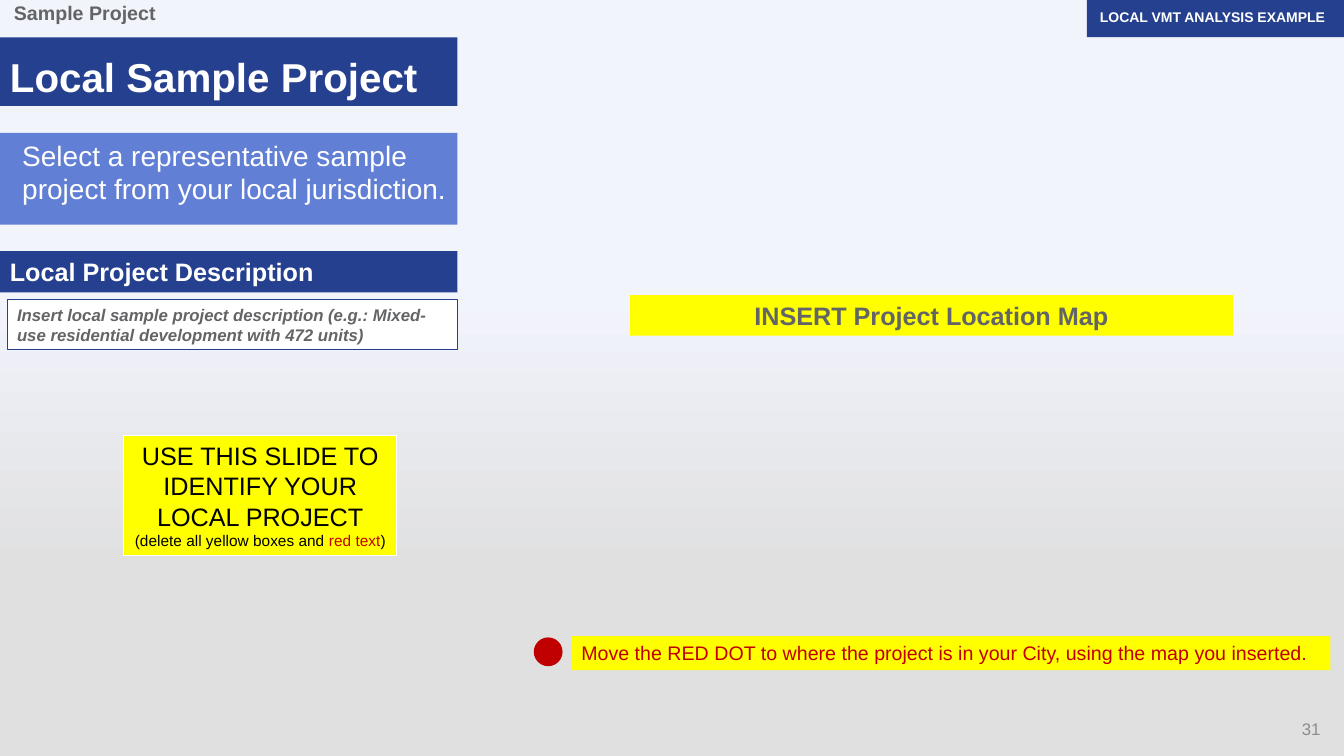
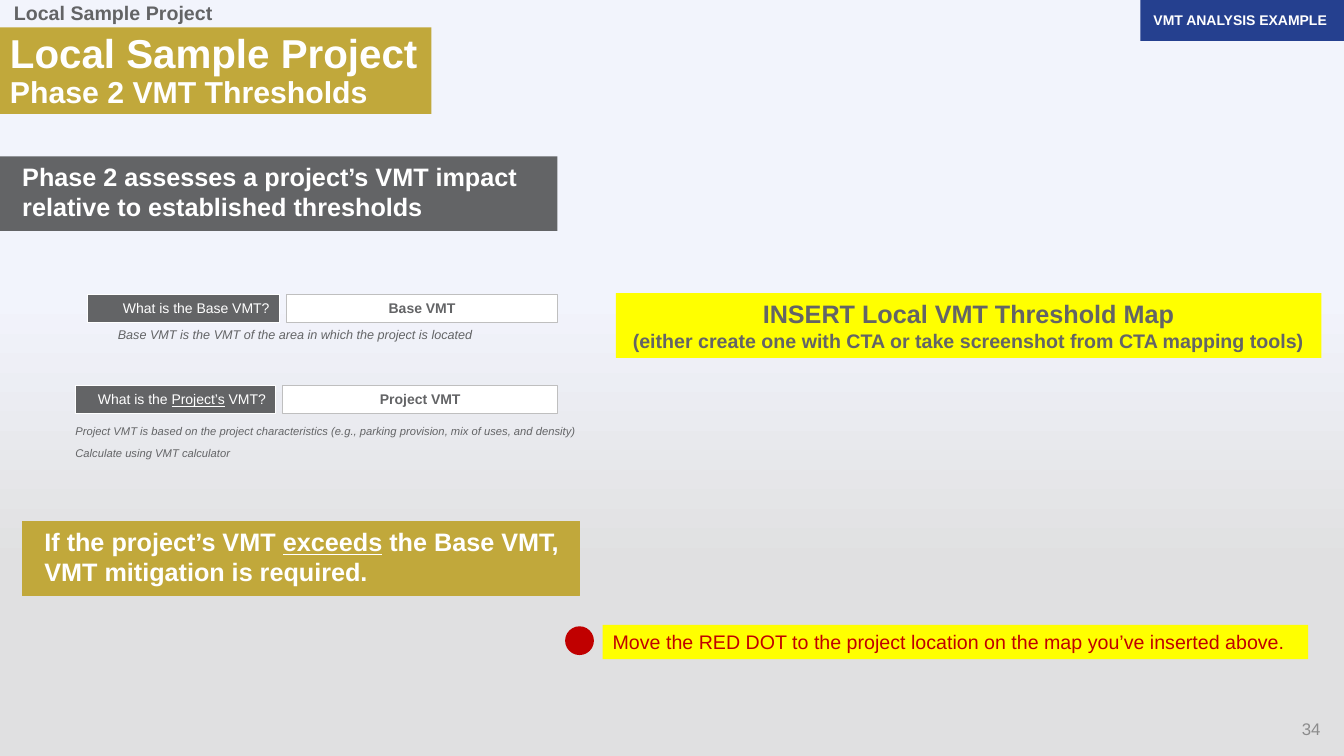
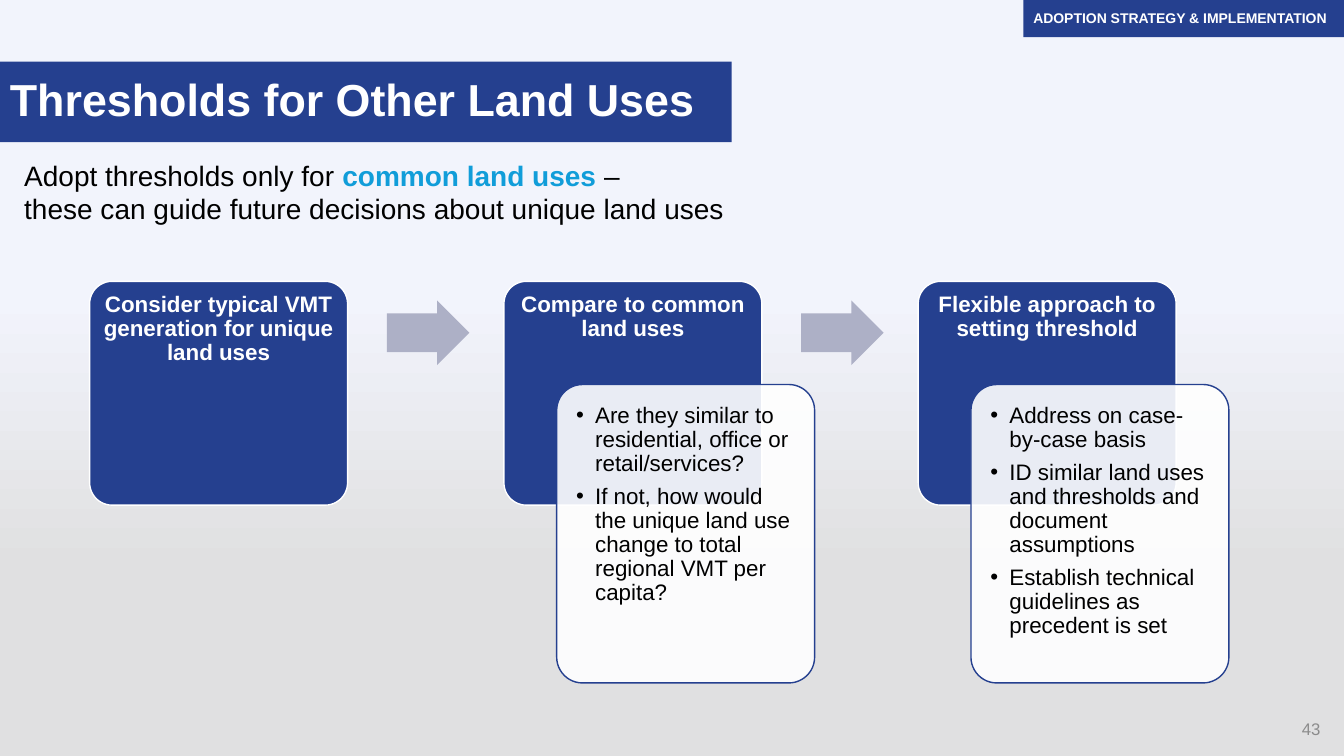
from lxml.etree import SubElement
from pptx import Presentation
from pptx.dml.color import RGBColor
from pptx.enum.shapes import MSO_SHAPE as Shape
from pptx.enum.text import MSO_ANCHOR as Anchor, MSO_AUTO_SIZE as AutoSize, PP_ALIGN as Align
from pptx.oxml.ns import qn
from pptx.util import Cm, Pt

NAVY = RGBColor(0x25, 0x40, 0x8F)
BLUE = RGBColor(0x62, 0x7F, 0xD6)
SKY = RGBColor(0x11, 0x9D, 0xD9)
GOLD = RGBColor(0xC1, 0xA8, 0x3B)
YELLOW = RGBColor(0xFF, 0xFF, 0x00)
RED = RGBColor(0xC0, 0x00, 0x00)
LAVENDER = RGBColor(0xAD, 0xB0, 0xC6)
DARK_GRAY = RGBColor(0x63, 0x64, 0x66)
PAGE_GRAY = RGBColor(0x8C, 0x8C, 0x8C)
LIGHT_GRAY = RGBColor(0xBF, 0xBF, 0xBF)
WHITE = RGBColor(0xFF, 0xFF, 0xFF)
BLACK = RGBColor(0x00, 0x00, 0x00)
BACKGROUND = ((0.39, RGBColor(0xF2, 0xF4, 0xFC)), (0.75, RGBColor(0xE0, 0xE0, 0xE1)))

FONT = "Arial"
SLIDE_WIDTH, SLIDE_HEIGHT = 33.87, 19.05
MARGINS = (0.25, 0.13, 0.25, 0.13)
BODY_MARGINS = (0.56, 0.13, 0.25, 0.13)


def set_bullet(paragraph, bullet):
    """Give the paragraph a hanging bullet, or clear the inherited one."""
    properties = paragraph._p.get_or_add_pPr()
    indent = Cm(0.48) if bullet else 0
    properties.set("marL", str(indent))
    properties.set("indent", str(-indent))
    if bullet:
        SubElement(properties, qn("a:buFont"), typeface=FONT)
        SubElement(properties, qn("a:buChar"), char=bullet)
    else:
        SubElement(properties, qn("a:buNone"))


def format_font(font, size, color, **styles):
    font.name = FONT
    font.size = Pt(size)
    font.color.rgb = color
    for name, value in styles.items():
        setattr(font, name, value)


def write(shape, paragraphs, font, layout=None, bullet=None, margins=MARGINS, anchor=Anchor.TOP):
    """Fill a shape; a paragraph is a string or a list of (text, font changes)."""
    frame = shape.text_frame
    frame.word_wrap = True
    frame.auto_size = AutoSize.NONE
    frame.vertical_anchor = anchor
    for side, margin in zip(("left", "top", "right", "bottom"), margins):
        setattr(frame, f"margin_{side}", Cm(margin))
    formats = {"alignment": Align.LEFT, "line_spacing": 1.0, "space_before": Pt(0),
               "space_after": Pt(0)} | (layout or {})
    for index, runs in enumerate(paragraphs):
        paragraph = frame.add_paragraph() if index else frame.paragraphs[0]
        set_bullet(paragraph, bullet)
        for name, value in formats.items():
            setattr(paragraph, name, value)
        if index == 0:
            paragraph.space_before = Pt(0)
        for text, changes in [(runs, {})] if isinstance(runs, str) else runs:
            if text == "\n":
                paragraph.add_line_break()
                continue
            run = paragraph.add_run()
            run.text = text
            format_font(run.font, **(font | changes))


def paint(shape, fill=None, line=None, line_width=0.75):
    if fill is None:
        shape.fill.background()
    else:
        shape.fill.solid()
        shape.fill.fore_color.rgb = fill
    if line is None:
        shape.line.fill.background()
    else:
        shape.line.color.rgb = line
        shape.line.width = Pt(line_width)


def add_shape(slide, kind, box, adjustments=(), **colors):
    shape = slide.shapes.add_shape(kind, *map(Cm, box))
    shape.shadow.inherit = False
    for index, value in enumerate(adjustments):
        shape.adjustments[index] = value
    paint(shape, **colors)
    return shape


def add_panel(slide, box, paragraphs, font, fill, line=None, **text_options):
    panel = add_shape(slide, Shape.RECTANGLE, box, fill=fill, line=line)
    write(panel, paragraphs, font, **text_options)


def add_text(slide, box, paragraphs, font, **text_options):
    write(slide.shapes.add_textbox(*map(Cm, box)), paragraphs, font, **text_options)


def fill_placeholder(placeholder, box, paragraphs, font, fill=None, **text_options):
    for name, value in zip(("left", "top", "width", "height"), box):
        setattr(placeholder, name, Cm(value))
    paint(placeholder, fill)
    write(placeholder, paragraphs, font, **text_options)


def fill_body(slide, box, paragraphs, font, **options):
    fill_placeholder(slide.placeholders[1], box, paragraphs, font,
                     layout={"space_after": Pt(6)}, **options)


def add_slide(presentation, page, section=None):
    slide = presentation.slides.add_slide(presentation.slide_layouts[1])
    add_text(slide, (30.99, 17.86, 2.54, 1.02), [page], {"size": 12, "color": PAGE_GRAY},
             layout={"alignment": Align.RIGHT}, anchor=Anchor.MIDDLE)
    if section:
        add_text(slide, (0.1, -0.1, 12.4, 0.86), [section],
                 {"size": 14, "color": DARK_GRAY, "bold": True})
    return slide


def add_corner_tag(slide, top, width, height, text, inset=0.33, spacing=1.1):
    add_panel(slide, (SLIDE_WIDTH - width, top, width, height), [text],
              {"size": 10, "color": WHITE, "bold": True}, NAVY,
              layout={"line_spacing": spacing}, margins=(inset, inset, 0.2, 0.2))


def add_red_dot_note(slide, left, top, width, text):
    add_shape(slide, Shape.OVAL, (left - 0.93, top + 0.05, 0.69, 0.69),
              fill=RED, line=RED, line_width=1)
    add_panel(slide, (left, top, width, 0.86), [text], {"size": 14, "color": RED}, YELLOW)


def add_map_prompt(slide, box, paragraphs):
    add_panel(slide, box, paragraphs, {"size": 18, "color": DARK_GRAY, "bold": True}, YELLOW,
              layout={"alignment": Align.CENTER})


def add_question_row(slide, box, question_width, question, answer):
    left, top, width, height = box
    answer_offset = question_width + 0.18
    add_panel(slide, (left, top, question_width, height), [question],
              {"size": 10, "color": WHITE}, DARK_GRAY, WHITE, layout={"alignment": Align.RIGHT})
    add_panel(slide, (left + answer_offset, top, width - answer_offset, height), [answer],
              {"size": 10, "color": DARK_GRAY, "bold": True}, WHITE, LIGHT_GRAY,
              layout={"alignment": Align.CENTER})


def add_step(slide, left, top, heading, details):
    """Draw a step card with its overlapping card of details, if any."""
    card = add_shape(slide, Shape.ROUNDED_RECTANGLE, (left, top, 6.5, 5.64), [0.1],
                     fill=NAVY, line=WHITE, line_width=1)
    write(card, [heading], {"size": 16, "color": WHITE, "bold": True},
          layout={"alignment": Align.CENTER, "line_spacing": 0.9}, margins=(0.13,) * 4)
    if details:
        detail_card = add_shape(slide, Shape.ROUNDED_RECTANGLE,
                                (left + 1.33, top + 2.6, 6.5, 7.52), [0.1],
                                fill=WHITE, line=NAVY, line_width=1)
        fill_color = detail_card.fill._xPr.find(qn("a:solidFill"))[0]
        SubElement(fill_color, qn("a:alpha"), val="90000")
        write(detail_card, details, {"size": 16, "color": BLACK}, bullet="•",
              layout={"line_spacing": 0.9, "space_after": Pt(6)}, margins=(0.3,) * 4)


def add_step_flow(slide, left, top, steps, pitch=10.44):
    for index, (heading, details) in enumerate(steps):
        step_left = left + index * pitch
        add_step(slide, step_left, top, heading, details)
        if index < len(steps) - 1:
            add_shape(slide, Shape.RIGHT_ARROW, (step_left + 7.49, top + 0.48, 2.08, 1.63),
                      [0.6, 0.5], fill=LAVENDER)


def build_project_slide(presentation):
    slide = add_slide(presentation, "31", "Sample Project")
    add_corner_tag(slide, -0.15, 6.48, 1.09, "LOCAL VMT ANALYSIS EXAMPLE")
    white_bold = {"color": WHITE, "bold": True}
    heading = {"layout": {"line_spacing": 0.9}, "anchor": Anchor.BOTTOM}
    fill_placeholder(slide.shapes.title, (0, 0.94, 11.53, 1.73), ["Local Sample Project"],
                     white_bold | {"size": 28.8}, NAVY, **heading)
    fill_body(slide, (0, 3.35, 11.53, 2.31),
              ["Select a representative sample project from your local jurisdiction."],
              {"size": 20, "color": WHITE}, fill=BLUE, margins=BODY_MARGINS)
    add_panel(slide, (0, 6.33, 11.53, 1.04), ["Local Project Description"],
              white_bold | {"size": 18}, NAVY, **heading)
    add_panel(slide, (0.18, 7.54, 11.35, 1.28),
              ["Insert local sample project description (e.g.: Mixed-use residential "
               "development with 472 units)"],
              {"size": 12, "color": DARK_GRAY, "bold": True, "italic": True}, WHITE, NAVY)
    add_panel(slide, (3.12, 10.97, 6.88, 3.02),
              ["USE THIS SLIDE TO IDENTIFY YOUR LOCAL PROJECT",
               [("(delete all yellow boxes and ", {"size": 11}),
                ("red text", {"size": 11, "color": RED}), (")", {"size": 11})]],
              {"size": 18, "color": BLACK}, YELLOW, WHITE, layout={"alignment": Align.CENTER})
    add_map_prompt(slide, (15.88, 7.44, 15.19, 1.02), ["INSERT Project Location Map"])
    add_red_dot_note(slide, 14.4, 16.03, 19.13, "Move the RED DOT to where the project is in "
                     "your City, using the map you inserted.")


def build_threshold_slide(presentation):
    slide = add_slide(presentation, "34", "Local Sample Project")
    add_corner_tag(slide, -0.08, 5.13, 1.11, "VMT ANALYSIS EXAMPLE")
    white_bold = {"size": 18, "color": WHITE, "bold": True}
    fill_placeholder(slide.shapes.title, (0, 0.69, 10.87, 2.18),
                     ["Local Sample Project", [("Phase 2 VMT Thresholds", {"size": 21.6})]],
                     white_bold | {"size": 28.8}, GOLD, anchor=Anchor.BOTTOM,
                     layout={"line_spacing": 0.7, "space_before": Pt(6)})
    fill_body(slide, (0, 3.94, 14.05, 1.88),
              ["Phase 2 assesses a project’s VMT impact relative to established thresholds"],
              white_bold, fill=DARK_GRAY, margins=BODY_MARGINS)

    note = {"color": DARK_GRAY, "italic": True}
    add_question_row(slide, (2.21, 7.43, 11.84, 0.69), 4.83, "What is the Base VMT?", "Base VMT")
    add_text(slide, (2.72, 8.1, 11.25, 0.64),
             ["Base VMT is the VMT of the area in which the project is located"],
             note | {"size": 9})
    add_question_row(slide, (1.9, 9.72, 12.15, 0.69), 5.05,
                     [("What is the ", {}), ("Project’s", {"underline": True}), (" VMT?", {})],
                     "Project VMT")
    add_text(slide, (1.65, 10.57, 13.26, 1.5),
             ["Project VMT is based on the project characteristics (e.g., parking provision, "
              "mix of uses, and density)", "Calculate using VMT calculator"],
             note | {"size": 8}, layout={"space_before": Pt(6)})

    add_panel(slide, (0.56, 13.13, 14.05, 1.88),
              [[("If the project’s VMT ", {}), ("exceeds", {"underline": True}),
                (" the Base VMT, VMT mitigation is required.", {})]],
              white_bold, GOLD, GOLD, margins=BODY_MARGINS)
    add_map_prompt(slide, (15.52, 7.39, 17.78, 1.63),
                   ["INSERT Local VMT Threshold Map",
                    [("(either create one with CTA or take screenshot from CTA mapping tools)",
                      {"size": 14})]])
    add_red_dot_note(slide, 15.19, 15.75, 17.78,
                     "Move the RED DOT to the project location on the map you’ve inserted above.")


def build_land_use_slide(presentation):
    slide = add_slide(presentation, "43")
    add_corner_tag(slide, 0, 8.08, 0.94, "ADOPTION STRATEGY & IMPLEMENTATION",
                   inset=0.25, spacing=1.0)
    fill_placeholder(slide.shapes.title, (0, 1.55, 18.44, 2.03),
                     ["Thresholds for Other Land Uses"],
                     {"size": 32, "color": WHITE, "bold": True}, NAVY,
                     layout={"line_spacing": 0.9}, anchor=Anchor.MIDDLE)
    fill_body(slide, (0.36, 3.86, 19.02, 2.03),
              [[("Adopt thresholds only for ", {}),
                ("common land uses ", {"color": SKY, "bold": True}), ("–", {}), ("\n", {}),
                ("these can guide future decisions about unique land uses", {})]],
              {"size": 20, "color": BLACK, "bold": False})
    add_step_flow(slide, 2.26, 7.09, [
        ("Consider typical VMT generation for unique land uses", []),
        ("Compare to common land uses",
         ["Are they similar to residential, office or retail/services?",
          "If not, how would the unique land use change to total regional VMT per capita?"]),
        ("Flexible approach to setting threshold",
         ["Address on case-by-case basis",
          "ID similar land uses and thresholds and document assumptions",
          "Establish technical guidelines as precedent is set"]),
    ])


def set_background(master):
    fill = master.background.fill
    fill.gradient()
    fill.gradient_angle = 270
    for stop, (position, color) in zip(fill.gradient_stops, BACKGROUND):
        stop.position = position
        stop.color.rgb = color


def main():
    presentation = Presentation()
    presentation.slide_width = Cm(SLIDE_WIDTH)
    presentation.slide_height = Cm(SLIDE_HEIGHT)
    set_background(presentation.slide_master)
    build_project_slide(presentation)
    build_threshold_slide(presentation)
    build_land_use_slide(presentation)
    presentation.save("out.pptx")


if __name__ == "__main__":
    main()
